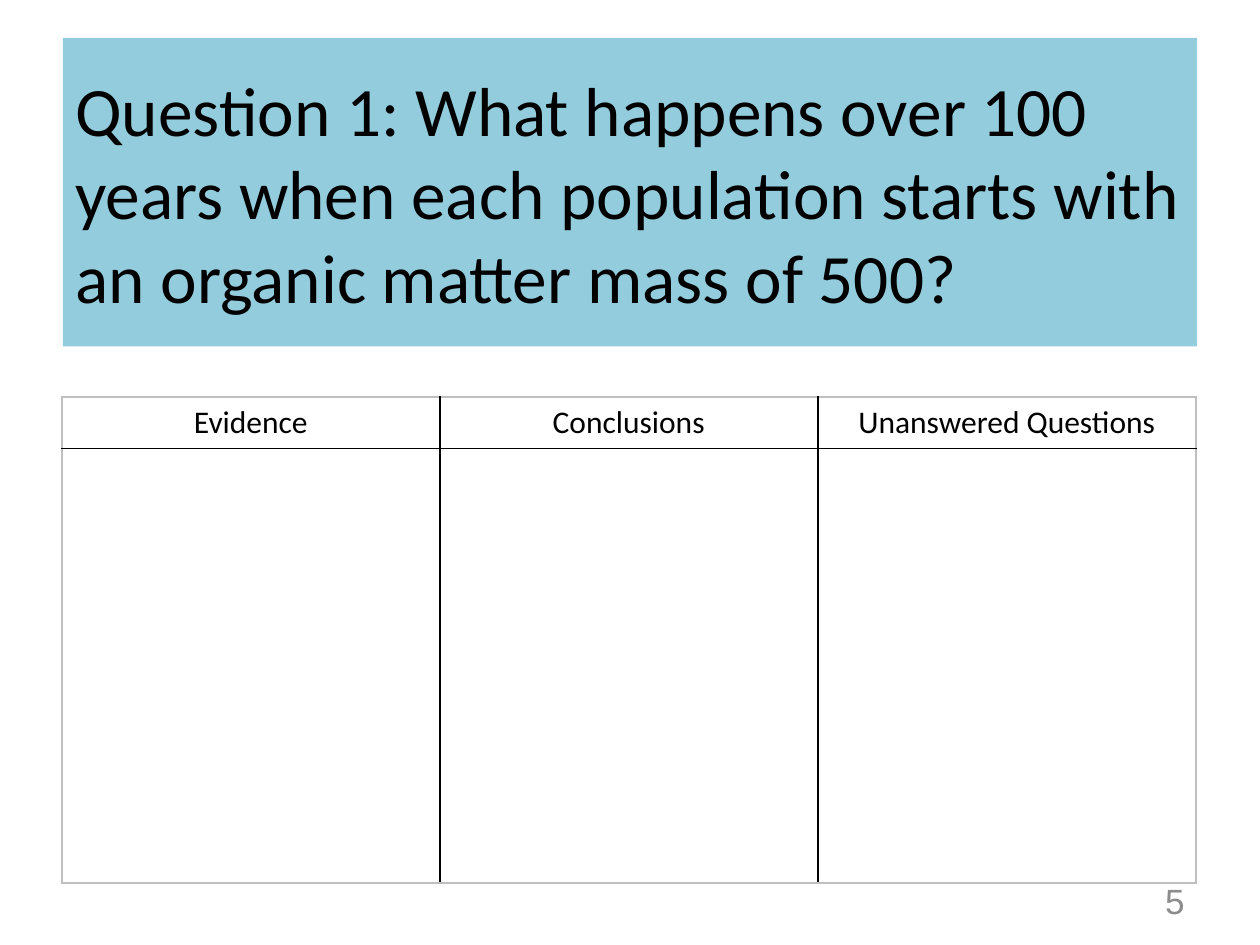
import pptx
import pptx.util
import pptx.dml.color
import pptx.enum.text
import pptx.enum.shapes
import lxml.etree
import pptx.oxml.ns

Pt = pptx.util.Pt
Align = pptx.enum.text.PP_ALIGN
Mid = pptx.enum.text.MSO_ANCHOR.MIDDLE


def tint(text):
    return pptx.dml.color.RGBColor.from_string(text)


def write(frame, text, size, face, color, align):
    frame.text = text
    para = frame.paragraphs[0]
    para.alignment = align
    for run in para.runs:
        run.font.size = Pt(size)
        run.font.name = face
        run.font.color.rgb = tint(color)


deck = pptx.Presentation()
deck.slide_width = pptx.util.Inches(10)
deck.slide_height = pptx.util.Inches(7.5)
wide = deck.slide_width
unit = wide // 100
slide = deck.slides.add_slide(deck.slide_layouts[6])

title = slide.shapes.add_shape(
    pptx.enum.shapes.MSO_SHAPE.RECTANGLE, 5 * unit, 3 * unit, 90 * unit, int(24.5 * unit))
title.shadow.inherit = False
title.fill.solid()
title.fill.fore_color.rgb = tint("93CDDD")
title.line.fill.background()
title.text_frame.word_wrap = True
title.text_frame.vertical_anchor = Mid
write(title.text_frame,
      "Question 1: What happens over 100 years when each population starts with "
      "an organic matter mass of 500?",
      39.6, "Calibri", "000000", Align.LEFT)

page = slide.shapes.add_textbox(int(71.7 * unit), int(69.5 * unit), int(23.3 * unit), 4 * unit)
page.text_frame.word_wrap = True
page.text_frame.vertical_anchor = Mid
write(page.text_frame, "5", 20, "Arial", "8C8C8C", Align.RIGHT)

heads = ["Evidence", "Conclusions", "Unanswered Questions"]
rows = [4.1, 34.5]
frame = slide.shapes.add_table(
    len(rows), len(heads), int(4.9 * unit), int(31.5 * unit), 90 * unit, int(sum(rows) * unit))
table = frame.table
table.first_row = False
table.horz_banding = False
for col in table.columns:
    col.width = 30 * unit
for row, high in zip(table.rows, rows):
    row.height = int(high * unit)

for r in range(len(rows)):
    for c in range(len(heads)):
        cell = table.cell(r, c)
        write(cell.text_frame, heads[c] if r == 0 else "", 18, "Calibri", "000000", Align.CENTER)
        props = cell._tc.get_or_add_tcPr()
        outer = {"lnL": c == 0, "lnR": c == len(heads) - 1,
                 "lnT": r == 0, "lnB": r == len(rows) - 1}
        for side, edge in outer.items():
            line = lxml.etree.SubElement(props, pptx.oxml.ns.qn("a:" + side), w=str(Pt(1)))
            fill = lxml.etree.SubElement(line, pptx.oxml.ns.qn("a:solidFill"))
            lxml.etree.SubElement(fill, pptx.oxml.ns.qn("a:srgbClr"),
                                  val="BFBFBF" if edge else "000000")
        cell.fill.background()

deck.save("out.pptx")
